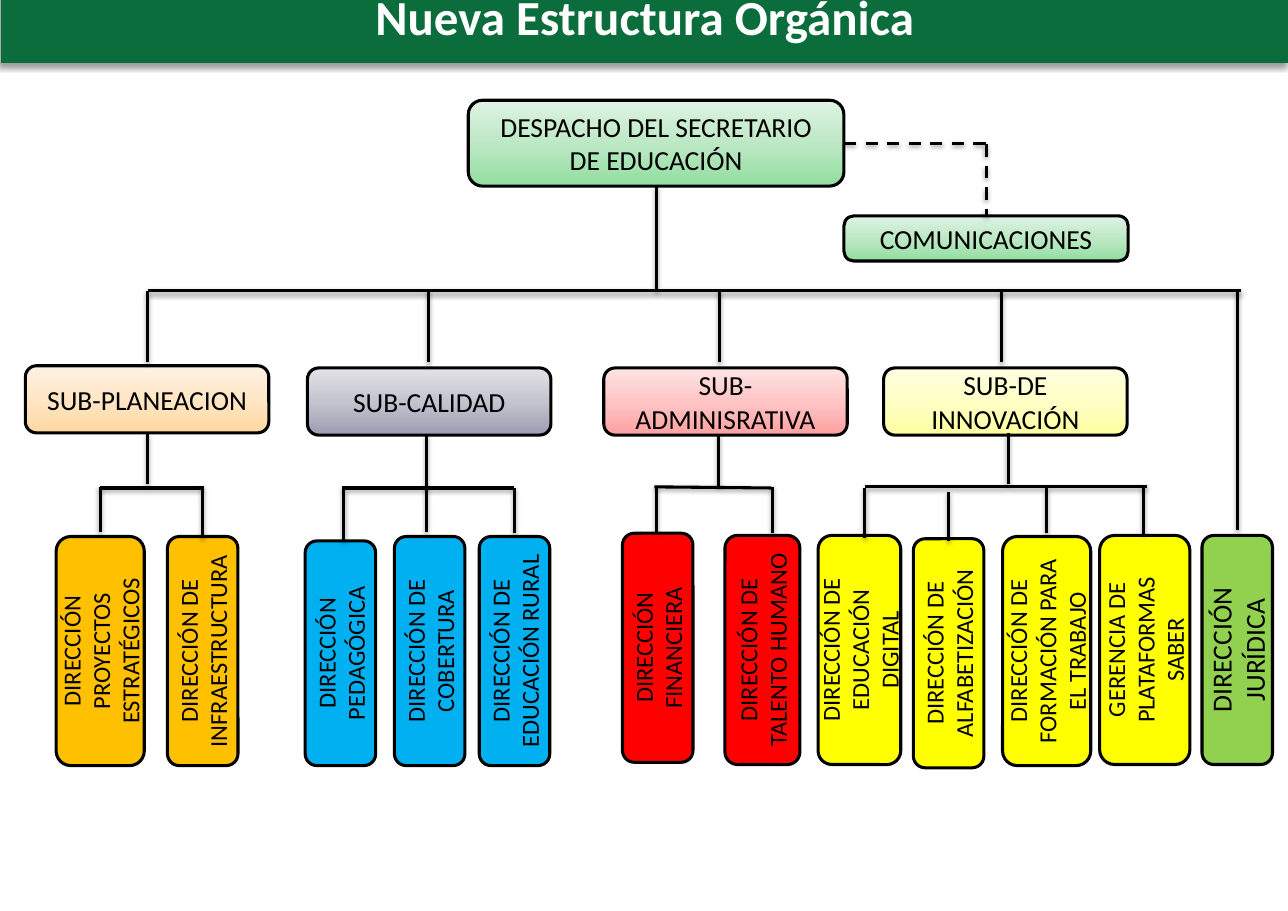
from dataclasses import dataclass
from typing import Optional

from pptx import Presentation
from pptx.dml.color import RGBColor
from pptx.enum.dml import MSO_LINE_DASH_STYLE as Dash
from pptx.enum.shapes import MSO_CONNECTOR as Connector, MSO_SHAPE as Shape
from pptx.enum.text import MSO_ANCHOR as Anchor, MSO_AUTO_SIZE as AutoSize, PP_ALIGN as Align
from pptx.oxml import parse_xml
from pptx.oxml.ns import nsdecls
from pptx.util import Inches, Pt

FONT = "Calibri"
COLORS = {
    "black": "000000", "white": "FFFFFF", "banner": "0A6D3B",
    "orange": "FFC000", "blue": "00B0F0", "red": "FF0000",
    "yellow": "FFFF00", "green": "92D050",
}
# Gradient stops from the bottom of a box to its top
GRADIENTS = {
    "mint": ("91DEA0", "BDE8C5", "DFF3E3"),
    "peach": ("FFD8A0", "FFE6C5", "FFF2E3"),
    "gray": ("9B9DB1", "C3C4CF", "E2E2E7"),
    "pink": ("FFA0A0", "FFC5C5", "FFE3E3"),
    "cream": ("FFFFA0", "FFFFC5", "FFFFE3"),
}
MARGINS = {"margin_left": Inches(0.11), "margin_right": Inches(0.11),
           "margin_top": Inches(0.06), "margin_bottom": Inches(0.06)}
BUS_Y = 2.64


@dataclass
class Box:
    text: str
    left: float
    top: float
    width: float
    height: float
    fill: str
    size: int = 18
    rotation: int = 0
    corner: Optional[float] = None


@dataclass
class Line:
    x1: float
    y1: float
    x2: float
    y2: float
    dashed: bool = False


@dataclass
class Unit:
    """An upright box, given by its centre, with the line that drops to it."""
    text: str
    x: float
    y: float
    breadth: float
    drop: Line
    length: float = 2.08
    size: int = 16


@dataclass
class Branch:
    head: Box
    bus_x: float
    stem: Line
    bar: Line
    color: str
    units: list[Unit]


def drop(x: float, top: float, bottom: float) -> Line:
    return Line(x, top, x, bottom)


def head(text: str, left: float, top: float, fill: str) -> Box:
    return Box(text, left, top, 2.21, 0.61, fill)


OFFICE = Box("DESPACHO DEL SECRETARIO DE EDUCACIÓN", 4.25, 0.91, 3.41, 0.78, "mint")
PRESS = Box("COMUNICACIONES", 7.66, 1.96, 2.58, 0.41, "mint", corner=0.218)
LEGAL = Unit("DIRECCIÓN JURÍDICA", 11.23, 5.9, 0.64, drop(11.23, BUS_Y, 4.81), size=18)
TOP_LINES = [
    Line(1.34, BUS_Y, 11.26, BUS_Y),
    drop(5.96, 1.69, BUS_Y),
    Line(7.66, 1.3, 8.95, 1.3, dashed=True),
    Line(8.95, 1.31, 8.95, 1.96, dashed=True),
]
BRANCHES = [
    Branch(head("SUB-PLANEACION", 0.23, 3.32, "peach"), 1.34,
           drop(1.34, 3.93, 4.39), Line(0.91, 4.43, 1.84, 4.43), "orange", [
        Unit("DIRECCIÓN PROYECTOS ESTRATÉGICOS", 0.91, 5.91, 0.8, drop(0.91, 4.42, 4.83)),
        Unit("DIRECCIÓN DE INFRAESTRUCTURA", 1.84, 5.91, 0.64, drop(1.84, 4.41, 4.88)),
    ]),
    Branch(head("SUB-CALIDAD", 2.79, 3.34, "gray"), 3.89,
           drop(3.87, 3.95, 4.42), Line(3.1, 4.43, 4.67, 4.43), "blue", [
        Unit("DIRECCIÓN PEDAGÓGICA", 3.09, 5.93, 0.64, drop(3.12, 4.44, 4.91), length=2.04),
        Unit("DIRECCIÓN DE COBERTURA", 3.9, 5.91, 0.64, drop(3.87, 4.42, 4.83)),
        Unit("DIRECCIÓN DE EDUCACIÓN RURAL", 4.67, 5.91, 0.64, drop(4.67, 4.43, 4.84)),
    ]),
    Branch(head("SUB-ADMINISRATIVA", 5.48, 3.34, "pink"), 6.53,
           drop(6.52, 3.94, 4.41), Line(5.94, 4.42, 7, 4.43), "red", [
        Unit("DIRECCIÓN FINANCIERA", 5.97, 5.88, 0.64, drop(5.96, 4.42, 4.83)),
        Unit("DIRECCIÓN DE TALENTO HUMANO", 6.92, 5.9, 0.68, drop(7.01, 4.42, 4.84)),
    ]),
    Branch(head("SUB-DE INNOVACIÓN", 8.02, 3.34, "cream"), 9.09,
           drop(9.15, 3.93, 4.39), Line(7.85, 4.42, 10.41, 4.42), "yellow", [
        Unit("DIRECCIÓN DE EDUCACIÓN DIGITAL", 7.8, 5.9, 0.75, drop(7.85, 4.43, 4.88)),
        Unit("DIRECCIÓN DE ALFABETIZACIÓN", 8.61, 5.93, 0.64, drop(8.61, 4.47, 4.91)),
        Unit("DIRECCIÓN DE FORMACIÓN PARA EL TRABAJO", 9.5, 5.91, 0.8, drop(9.5, 4.43, 4.84)),
        Unit("GERENCIA DE PLATAFORMAS SABER", 10.39, 5.9, 0.82, drop(10.38, 4.41, 4.85)),
    ]),
]


def color(name: str) -> RGBColor:
    return RGBColor.from_string(COLORS[name])


def add_shadow(shape, opacity: int, blur: float, distance: float, angle: int) -> None:
    shape._element.spPr.append(parse_xml(
        f'<a:effectLst {nsdecls("a")}><a:outerShdw blurRad="{Pt(blur)}" dist="{Pt(distance)}" '
        f'dir="{angle * 60000}" algn="tl" rotWithShape="0"><a:srgbClr val="{COLORS["black"]}">'
        f'<a:alpha val="{opacity * 1000}"/></a:srgbClr></a:outerShdw></a:effectLst>'))


def fill_shape(shape, name: str) -> None:
    if name in COLORS:
        shape.fill.solid()
        shape.fill.fore_color.rgb = color(name)
        return
    stops = "".join(f'<a:gs pos="{index * 50000}"><a:srgbClr val="{value}"/></a:gs>'
                    for index, value in enumerate(GRADIENTS[name]))
    gradient = parse_xml(f'<a:gradFill {nsdecls("a")} rotWithShape="1"><a:gsLst>{stops}</a:gsLst>'
                         f'<a:lin ang="{270 * 60000}" scaled="0"/></a:gradFill>')
    shape._element.spPr.insert(2, gradient)  # after the position and the geometry


def write_text(shape, text: str, font_color: str, size: int, bold: bool = False) -> None:
    frame = shape.text_frame
    frame.text = text
    frame_format = {"word_wrap": True, "auto_size": AutoSize.NONE, "vertical_anchor": Anchor.MIDDLE}
    for name, value in (frame_format | MARGINS).items():
        setattr(frame, name, value)
    paragraph = frame.paragraphs[0]
    paragraph.alignment = Align.CENTER
    font = paragraph.runs[0].font
    for name, value in {"name": FONT, "size": Pt(size), "bold": bold}.items():
        setattr(font, name, value)
    font.color.rgb = color(font_color)


def add_box(slide, box: Box) -> None:
    place = map(Inches, (box.left, box.top, box.width, box.height))
    shape = slide.shapes.add_shape(Shape.ROUNDED_RECTANGLE, *place)
    shape.rotation = box.rotation
    if box.corner is not None:
        shape.adjustments[0] = box.corner
    fill_shape(shape, box.fill)
    shape.line.color.rgb = color("black")
    shape.line.width = Pt(2)
    shape.shadow.inherit = False
    write_text(shape, box.text, "black", box.size)


def add_line(slide, line: Line) -> None:
    ends = map(Inches, (line.x1, line.y1, line.x2, line.y2))
    connector = slide.shapes.add_connector(Connector.STRAIGHT, *ends)
    connector.line.color.rgb = color("black")
    connector.line.width = Pt(2)
    if line.dashed:
        connector.line.dash_style = Dash.DASH
    add_shadow(connector, 38, 3.1, 1.6, 90)


def add_unit(slide, unit: Unit, fill: str) -> None:
    left, top = unit.x - unit.length / 2, unit.y - unit.breadth / 2
    add_box(slide, Box(unit.text, left, top, unit.length, unit.breadth, fill, unit.size, 270))
    add_line(slide, unit.drop)


def add_title(slide, text: str) -> None:
    title = slide.shapes.title
    place = {"left": 0.01, "top": -0.28, "width": 11.69, "height": 0.85}
    for name, value in place.items():
        setattr(title, name, Inches(value))
    fill_shape(title, "banner")
    add_shadow(title, 40, 4, 3, 135)
    write_text(title, text, "white", 32, bold=True)


def main() -> None:
    presentation = Presentation()
    presentation.slide_width, presentation.slide_height = Inches(11.69), Inches(8.27)
    slide = presentation.slides.add_slide(presentation.slide_layouts[5])
    add_title(slide, "Nueva Estructura Orgánica")

    # Secretary's office and the main bus
    for box in (OFFICE, PRESS):
        add_box(slide, box)
    for line in TOP_LINES:
        add_line(slide, line)

    # Branches with their units
    for branch in BRANCHES:
        add_box(slide, branch.head)
        for unit in branch.units:
            add_unit(slide, unit, branch.color)
        for line in (drop(branch.bus_x, BUS_Y, 3.29), branch.stem, branch.bar):
            add_line(slide, line)
    add_unit(slide, LEGAL, "green")

    presentation.save("out.pptx")


if __name__ == "__main__":
    main()
